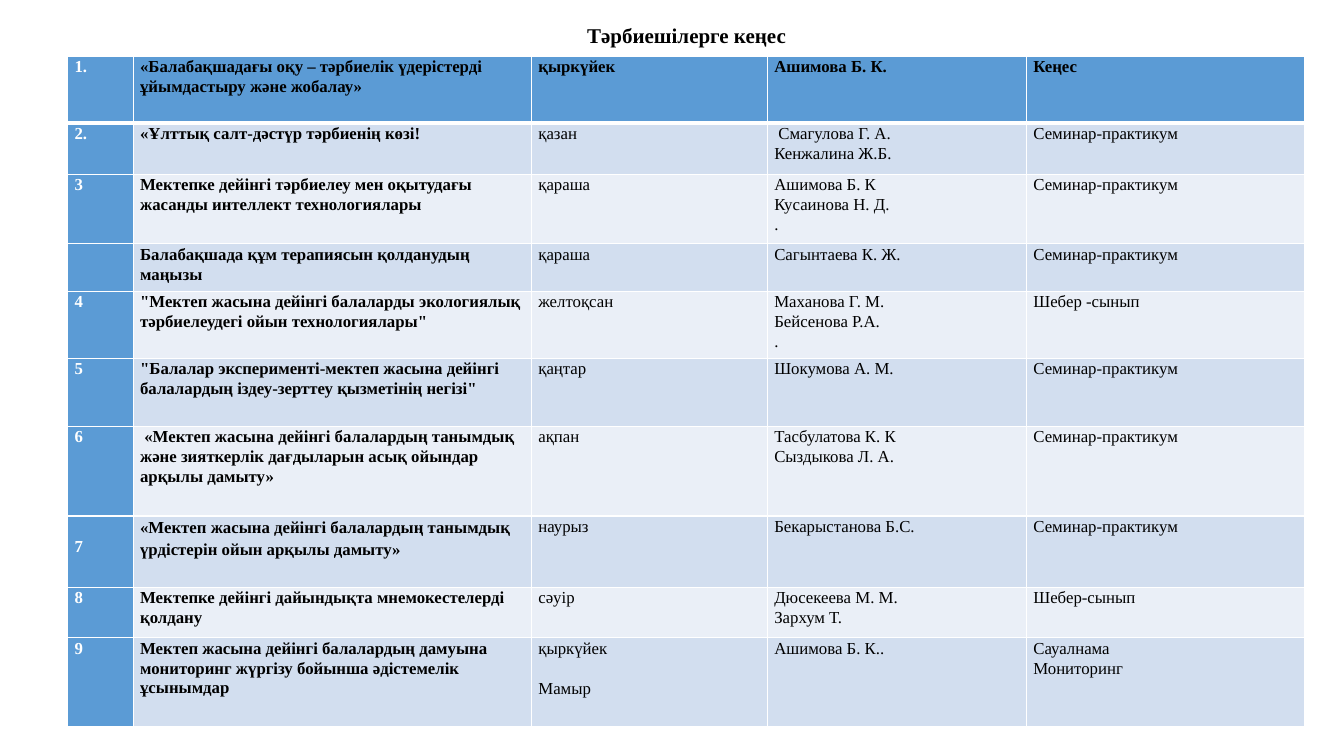
from lxml import etree
from pptx import Presentation
from pptx.dml.color import RGBColor
from pptx.enum.text import MSO_ANCHOR, PP_ALIGN
from pptx.oxml.ns import qn
from pptx.util import Inches, Pt

TOP, CENTER = MSO_ANCHOR.TOP, PP_ALIGN.CENTER
BLACK = RGBColor(0x00, 0x00, 0x00)
WHITE = RGBColor(0xFF, 0xFF, 0xFF)
BLUE = RGBColor(0x5B, 0x9B, 0xD5)
BAND_DARK = RGBColor(0xD2, 0xDE, 0xEF)
BAND_LIGHT = RGBColor(0xEA, 0xEF, 0xF7)

FONT = "Times New Roman"
SIDE_MARGIN = 0.07
LINE_SPACING = 1.07
TABLE_LEFT, TABLE_TOP = 0.67, 0.56
COL_WIDTHS = [0.65, 3.95, 2.34, 2.57, 2.76]
ROW_HEIGHTS = [0.66, 0.51, 0.69, 0.47, 0.67, 0.67, 0.89, 0.71, 0.5, 0.88]

SEMINAR = "Семинар-практикум"
# Number, topic, month, speakers, form of work; each line is a paragraph
PLAN = [
    ("1.", "«Балабақшадағы оқу – тәрбиелік үдерістерді ұйымдастыру және жобалау»",
     "қыркүйек", "Ашимова Б. К.", "Кеңес"),
    ("2.", "«Ұлттық салт-дәстүр тәрбиенің көзі!",
     "қазан", " Смагулова Г. А.\nКенжалина Ж.Б.", SEMINAR),
    ("3", "Мектепке дейінгі тәрбиелеу мен оқытудағы жасанды интеллект технологиялары",
     "қараша", "Ашимова Б. К\nКусаинова Н. Д.\n.", SEMINAR),
    ("", "Балабақшада құм терапиясын қолданудың маңызы",
     "қараша", "Сагынтаева К. Ж.", SEMINAR),
    ("4", "\"Мектеп жасына дейінгі балаларды экологиялық тәрбиелеудегі ойын технологиялары\"",
     "желтоқсан", "Маханова Г. М.\nБейсенова Р.А.\n.", "Шебер -сынып"),
    ("5", "\"Балалар эксперименті-мектеп жасына дейінгі балалардың іздеу-зерттеу қызметінің негізі\"",
     "қаңтар", "Шокумова А. М.", SEMINAR),
    ("6", " «Мектеп жасына дейінгі балалардың танымдық және зияткерлік дағдыларын асық ойындар арқылы дамыту»",
     "ақпан", "Тасбулатова К. К\nСыздыкова Л. А.", SEMINAR),
    ("7", "«Мектеп жасына дейінгі балалардың танымдық үрдістерін ойын арқылы дамыту»",
     "наурыз", "Бекарыстанова Б.С.", SEMINAR),
    ("8", "Мектепке дейінгі дайындықта мнемокестелерді қолдану",
     "сәуір", "Дюсекеева М. М.\nЗархум Т.", "Шебер-сынып"),
    ("9", "Мектеп жасына дейінгі балалардың дамуына мониторинг жүргізу бойынша әдістемелік ұсынымдар",
     "қыркүйек\nМамыр", "Ашимова Б. К..", "Сауалнама\nМониторинг"),
]
MARCH_ROW, LAST_ROW = 7, 9
NUMBER_COL, TOPIC_COL, MONTH_COL = 0, 1, 2


def set_attrs(obj, values):
    for name, value in values.items():
        setattr(obj, name, value)


def add_run(p, text, size, color, bold):
    r = p.add_run()
    r.text = text
    set_attrs(r.font, {"name": FONT, "size": Pt(size), "bold": bold})
    r.font.color.rgb = color


def add_title(s, text, left, top, width, height):
    tf = s.shapes.add_textbox(*map(Inches, (left, top, width, height))).text_frame
    set_attrs(tf, {"word_wrap": True, "vertical_anchor": TOP,
                   "margin_left": Inches(SIDE_MARGIN), "margin_right": Inches(SIDE_MARGIN),
                   "margin_top": Inches(0.04), "margin_bottom": Inches(0.04)})
    p = tf.paragraphs[0]
    p.alignment = CENTER
    add_run(p, text, 15, BLACK, True)


def set_borders(cell, widths):
    tc_pr = cell._tc.get_or_add_tcPr()
    for side, width in widths.items():
        ln = etree.SubElement(tc_pr, qn(f"a:ln{side}"), w=str(Pt(width)))
        fill = etree.SubElement(ln, qn("a:solidFill"))
        etree.SubElement(fill, qn("a:srgbClr"), val=str(WHITE))


def fill_color(row, col):
    if row == 0 or col == NUMBER_COL:
        return BLUE
    return BAND_DARK if row % 2 else BAND_LIGHT


def fill_cell(cell, row, col, text):
    set_borders(cell, {"L": 1, "R": 1, "T": 3 if row == 1 else 1,
                       "B": 3 if row == 0 else 1})
    cell.fill.solid()
    cell.fill.fore_color.rgb = fill_color(row, col)
    # The number of the March row sits one line lower
    lowered = row == MARCH_ROW and col == NUMBER_COL
    set_attrs(cell, {"margin_left": Inches(SIDE_MARGIN), "margin_right": Inches(SIDE_MARGIN),
                     "margin_top": Inches(0.2 if lowered else 0), "margin_bottom": 0,
                     "vertical_anchor": TOP})
    if not text:
        return
    color = WHITE if col == NUMBER_COL else BLACK
    bold = row == 0 or col in (NUMBER_COL, TOPIC_COL)
    tf = cell.text_frame
    for i, line in enumerate(text.split("\n")):
        p = tf.add_paragraph() if i else tf.paragraphs[0]
        p.line_spacing = 1.15 if (row, col) == (MARCH_ROW, TOPIC_COL) else LINE_SPACING
        # The two months of the last row stand a line apart
        if i and (row, col) == (LAST_ROW, MONTH_COL):
            p.space_before = Pt(14.5)
        add_run(p, line, 12, color, bold)


def add_plan(s):
    table = s.shapes.add_table(
        len(PLAN), len(COL_WIDTHS), Inches(TABLE_LEFT), Inches(TABLE_TOP),
        Inches(sum(COL_WIDTHS)), Inches(sum(ROW_HEIGHTS))).table
    for column, width in zip(table.columns, COL_WIDTHS):
        column.width = Inches(width)
    for row, height in zip(table.rows, ROW_HEIGHTS):
        row.height = Inches(height)
    for row, texts in enumerate(PLAN):
        for col, text in enumerate(texts):
            fill_cell(table.cell(row, col), row, col, text)


def main():
    prs = Presentation()
    prs.slide_width, prs.slide_height = Inches(13.33), Inches(7.5)
    s = prs.slides.add_slide(prs.slide_layouts[6])
    add_plan(s)
    add_title(s, "Тәрбиешілерге кеңес", 4.82, 0.18, 3.98, 0.56)
    prs.save("out.pptx")


if __name__ == "__main__":
    main()
